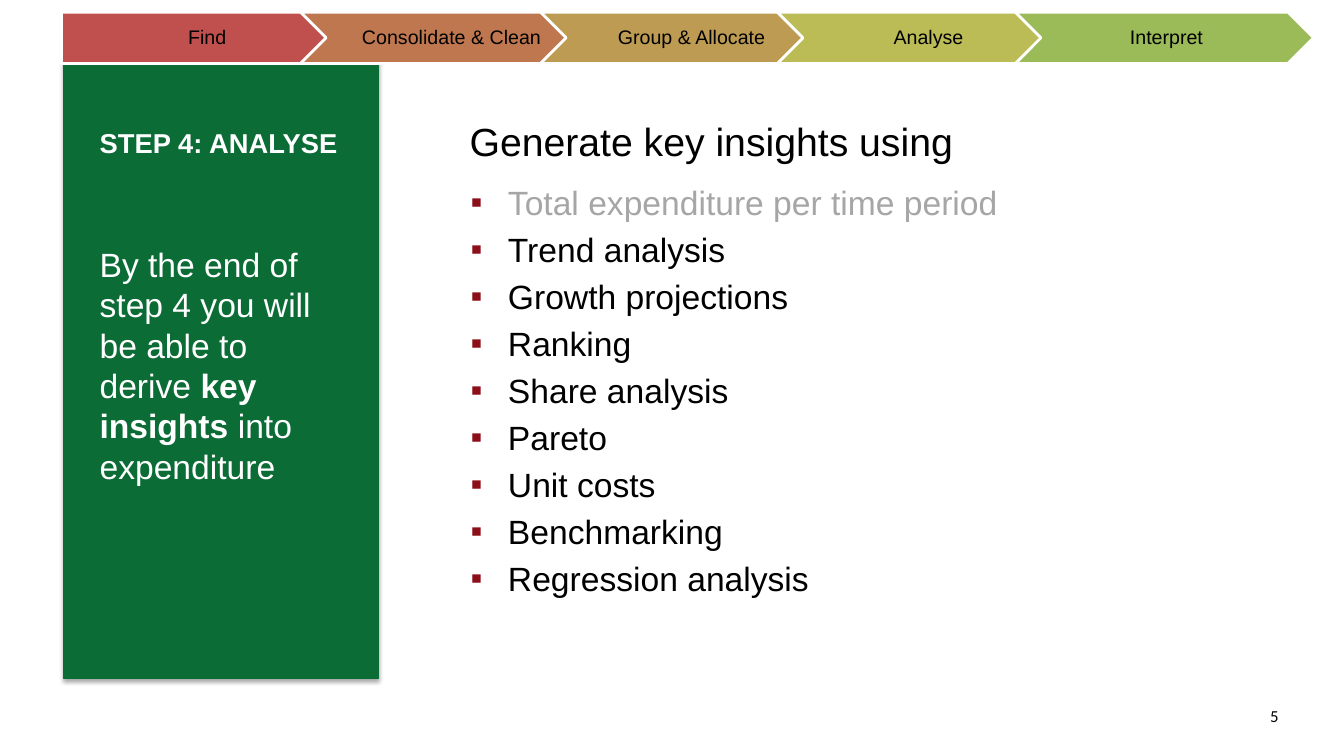
from dataclasses import dataclass

from lxml import etree
from pptx import Presentation
from pptx.dml.color import RGBColor
from pptx.enum.shapes import MSO_SHAPE
from pptx.enum.text import MSO_ANCHOR, PP_ALIGN
from pptx.oxml.ns import qn
from pptx.util import Inches, Pt

PENTAGON, CHEVRON, RECTANGLE = MSO_SHAPE.PENTAGON, MSO_SHAPE.CHEVRON, MSO_SHAPE.RECTANGLE
TOP, MIDDLE, BOTTOM = MSO_ANCHOR.TOP, MSO_ANCHOR.MIDDLE, MSO_ANCHOR.BOTTOM
LEFT, CENTER, RIGHT = PP_ALIGN.LEFT, PP_ALIGN.CENTER, PP_ALIGN.RIGHT

BLACK, WHITE, GREY = "000000", "FFFFFF", "A6A6A6"
GREEN, GREEN_EDGE, BULLET_RED = "0B6C36", "086C35", "8B0E18"
LINE_FACTOR = 1.2


@dataclass
class Step:
    label: str
    left: float
    fill: str
    outline: int = CHEVRON
    left_inset: float = 0.06


@dataclass
class Insight:
    label: str
    color: str = BLACK
    space_before: float = 4.8


STEPS = [
    Step("Find", 0.61, "C0504D", PENTAGON, 0.08),
    Step("Consolidate & Clean", 2.98, "BF7750"),
    Step("Group & Allocate", 5.36, "BD9B53"),
    Step("Analyse", 7.71, "BCBC56"),
    Step("Interpret", 10.07, "9BBB59"),
]

INSIGHTS = [
    Insight("Total expenditure per time period", GREY, 12),
    Insight("Trend analysis"),
    Insight("Growth projections"),
    Insight("Ranking"),
    Insight("Share analysis"),
    Insight("Pareto"),
    Insight("Unit costs"),
    Insight("Benchmarking"),
    Insight("Regression analysis"),
]


def rgb(color: str) -> RGBColor:
    return RGBColor.from_string(color)


def style_font(paragraph, size: float, color: str, name: str = "Arial", bold: bool = False) -> None:
    font = paragraph.font
    font.name, font.size, font.bold = name, Pt(size), bold
    font.color.rgb = rgb(color)


def add_block(slide, shape_type: int, box: tuple, fill: str, line: str, line_width: float):
    shape = slide.shapes.add_shape(shape_type, *map(Inches, box))
    shape.shadow.inherit = False
    shape.fill.solid()
    shape.fill.fore_color.rgb = rgb(fill)
    shape.line.color.rgb = rgb(line)
    shape.line.width = Pt(line_width)
    return shape


def add_text_frame(slide, box: tuple, anchor: int = TOP):
    frame = slide.shapes.add_textbox(*map(Inches, box)).text_frame
    frame.word_wrap = True
    frame.vertical_anchor = anchor
    return frame


def add_drop_shadow(shape) -> None:
    effects = shape._element.spPr.find(qn("a:effectLst"))
    shadow = etree.SubElement(effects, qn("a:outerShdw"), blurRad=str(Pt(3.1)),
                              dist=str(Pt(1.8)), dir="5400000", rotWithShape="0")
    color = etree.SubElement(shadow, qn("a:srgbClr"), val=BLACK)
    etree.SubElement(color, qn("a:alpha"), val="35000")


def set_indent(paragraph, margin: float, first_line: float = 0) -> None:
    properties = paragraph._p.get_or_add_pPr()
    properties.set("marL", str(Inches(margin)))
    properties.set("indent", str(Inches(first_line)))


def add_bullet(paragraph) -> None:
    properties = paragraph._p.get_or_add_pPr()
    bullet_color = etree.SubElement(properties, qn("a:buClr"))
    etree.SubElement(bullet_color, qn("a:srgbClr"), val=BULLET_RED)
    etree.SubElement(properties, qn("a:buFont"), typeface="Arial")
    etree.SubElement(properties, qn("a:buChar"), char="▪")


def add_side_panel(slide) -> None:
    panel = add_block(slide, RECTANGLE, (0.63, 0.34, 3.12, 6.39), GREEN, GREEN_EDGE, 0.75)
    add_drop_shadow(panel)

    title = add_text_frame(slide, (0.89, 0.28, 2.85, 1.35), BOTTOM).paragraphs[0]
    title.text = "STEP 4: ANALYSE"
    style_font(title, 19.5, WHITE, bold=True)

    goal = add_text_frame(slide, (0.89, 2.37, 2.53, 3.21)).paragraphs[0]
    goal.line_spacing = Pt(24 * LINE_FACTOR)
    style_font(goal, 24, WHITE)
    for text, bold in (
        ("By the end of step 4 you will be able to derive ", False),
        ("key insights ", True),
        ("into expenditure", False),
    ):
        run = goal.add_run()
        run.text = text
        run.font.bold = bold


def add_insights(slide) -> None:
    frame = add_text_frame(slide, (4.15, 1.12, 7.87, 5.57))
    heading = frame.paragraphs[0]
    heading.text = "Generate key insights using"
    set_indent(heading, 0.41)
    heading.line_spacing = Pt(28 * LINE_FACTOR)
    style_font(heading, 28, BLACK)
    for insight in INSIGHTS:
        paragraph = frame.add_paragraph()
        paragraph.text = insight.label
        set_indent(paragraph, 0.79, -0.37)
        add_bullet(paragraph)
        paragraph.line_spacing = Pt(24 * LINE_FACTOR)
        paragraph.space_before = Pt(insight.space_before)
        style_font(paragraph, 24, insight.color)


def add_step(slide, step: Step) -> None:
    shape = add_block(slide, step.outline, (step.left, 0.12, 2.96, 0.51), step.fill, WHITE, 2)
    frame = shape.text_frame
    frame.word_wrap = True
    frame.vertical_anchor = MIDDLE
    frame.margin_left, frame.margin_right = Inches(step.left_inset), Inches(0.02)
    frame.margin_top = frame.margin_bottom = Inches(0.04)
    paragraph = frame.paragraphs[0]
    paragraph.text = step.label
    paragraph.alignment = CENTER
    paragraph.line_spacing = 0.9
    style_font(paragraph, 14, BLACK)


def add_page_number(slide) -> None:
    number = add_text_frame(slide, (12.02, 6.95, 0.76, 0.39)).paragraphs[0]
    number.text = "5"
    number.alignment = RIGHT
    style_font(number, 12, BLACK, "Calibri")


def main() -> None:
    presentation = Presentation()
    presentation.slide_width, presentation.slide_height = Inches(13.33), Inches(7.5)
    slide = presentation.slides.add_slide(presentation.slide_layouts[6])

    # Side panel, main list and page number
    add_side_panel(slide)
    add_insights(slide)
    add_page_number(slide)

    # Process strip; each chevron overlaps the one before
    for step in STEPS:
        add_step(slide, step)

    presentation.save("out.pptx")


if __name__ == "__main__":
    main()
